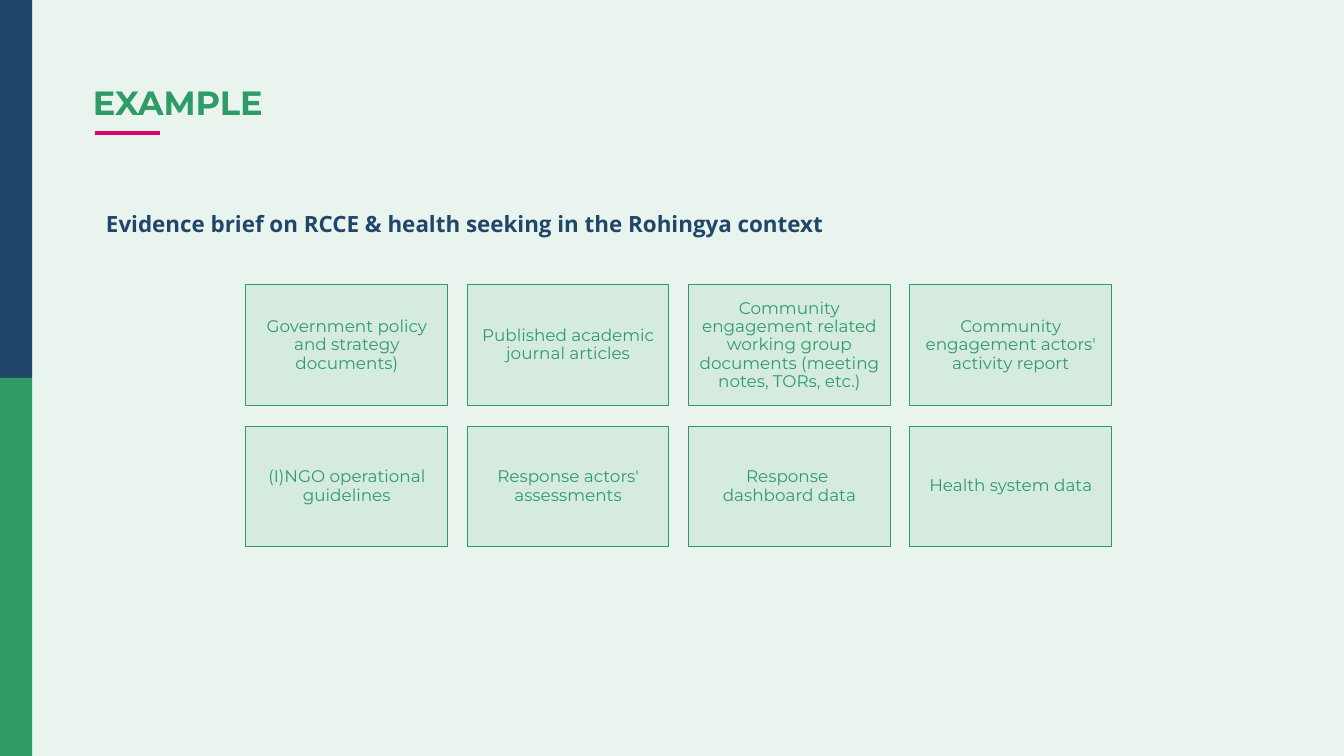
from dataclasses import dataclass

from lxml.etree import SubElement
from pptx import Presentation
from pptx.dml.color import RGBColor as RGB
from pptx.enum.shapes import MSO_CONNECTOR as LINK
from pptx.enum.shapes import MSO_SHAPE as SHAPE
from pptx.enum.text import MSO_ANCHOR as ANCHOR
from pptx.enum.text import PP_ALIGN as ALIGN
from pptx.oxml.ns import qn
from pptx.util import Inches, Pt


@dataclass(frozen=True)
class Theme:
    """Colours, fonts and type sizes of the slide."""

    green: RGB = RGB.from_string("2F9C67")
    navy: RGB = RGB.from_string("204669")
    pink: RGB = RGB.from_string("D90368")
    pale: RGB = RGB.from_string("E9F4EE")
    head: str = "Montserrat"
    body: str = "Open Sans"
    title: Pt = Pt(18)
    lead: Pt = Pt(12)
    card: Pt = Pt(9)


THEME = Theme()
WIDTH = 10
HEIGHT = WIDTH * 9 / 16
SOURCES = [
    [
        "Government policy and strategy documents)",
        "Published academic journal articles",
        "Community engagement related working group documents (meeting notes, TORs, etc.)",
        "Community engagement actors' activity report",
    ],
    [
        "(I)NGO operational guidelines",
        "Response actors' assessments",
        "Response \vdashboard data",
        "Health system data",
    ],
]


def apply(target, values):
    """Set each named attribute on the target."""
    for name, value in values.items():
        setattr(target, name, value)


def write(frame, text, font, color, box, para):
    """Put one styled paragraph in a text frame."""
    apply(frame, {"word_wrap": True, **box})
    line = frame.paragraphs[0]
    line.text = text
    apply(line, para)
    for run in line.runs:
        apply(run.font, font)
        run.font.color.rgb = color


def add_rect(slide, left, top, width, height, color):
    """Add a plain rectangle without outline or shadow."""
    rect = slide.shapes.add_shape(
        SHAPE.RECTANGLE, Inches(left), Inches(top), Inches(width), Inches(height)
    )
    rect.shadow.inherit = False
    rect.fill.solid()
    rect.fill.fore_color.rgb = color
    rect.line.fill.background()
    return rect


def add_rule(slide, left, right, y):
    """Add the short accent line under the title."""
    rule = slide.shapes.add_connector(
        LINK.STRAIGHT, Inches(left), Inches(y), Inches(right), Inches(y)
    )
    rule.line.color.rgb = THEME.pink
    rule.line.width = Pt(2.25)
    SubElement(rule._element.spPr, qn("a:effectLst"))


def add_title(slide, text):
    """Place and style the title."""
    title = slide.shapes.title
    place = {"left": 0.69, "top": 0.59, "width": 8.62, "height": 0.37}
    apply(title, {name: Inches(size) for name, size in place.items()})
    font = {"name": THEME.head, "size": THEME.title, "bold": True}
    box = {"margin_left": 0, "vertical_anchor": ANCHOR.TOP}
    para = {"alignment": ALIGN.LEFT, "line_spacing": 0.9}
    write(title.text_frame, text, font, THEME.green, box, para)


def add_lead(slide, text):
    """Add the heading above the cards."""
    lead = slide.shapes.add_textbox(
        Inches(0.69), Inches(1.5), Inches(8.62), Inches(0.49)
    )
    font = {"name": THEME.body, "size": THEME.lead, "bold": True}
    write(lead.text_frame, text, font, THEME.navy, {}, {"line_spacing": Pt(15.4)})


def add_card(slide, left, top, width, height, text):
    """Add a tinted, outlined box with centred text."""
    card = add_rect(slide, left, top, width, height, THEME.green)
    tint = card._element.spPr.find(qn("a:solidFill"))[0]
    SubElement(tint, qn("a:alpha"), val="10000")
    card.line.color.rgb = THEME.green
    card.line.width = Pt(0.5)
    sides = ("left", "top", "right", "bottom")
    box = {f"margin_{side}": Inches(0.04) for side in sides}
    box["vertical_anchor"] = ANCHOR.MIDDLE
    font = {"name": THEME.head, "size": THEME.card}
    para = {"alignment": ALIGN.CENTER, "line_spacing": 0.9}
    write(card.text_frame, text, font, THEME.green, box, para)


def add_grid(slide, rows):
    """Lay the cards out in rows with equal gaps."""
    left, right, top, width, height, gap = 1.83, 8.27, 2.12, 1.5, 0.9, 0.15
    for row, texts in enumerate(rows):
        step = (right - left - width) / (len(texts) - 1)
        for col, text in enumerate(texts):
            x, y = left + col * step, top + row * (height + gap)
            add_card(slide, x, y, width, height, text)


def main():
    """Build and save the slide."""
    deck = Presentation()
    apply(deck, {"slide_width": Inches(WIDTH), "slide_height": Inches(HEIGHT)})
    slide = deck.slides.add_slide(deck.slide_layouts[5])
    slide.background.fill.solid()
    slide.background.fill.fore_color.rgb = THEME.pale
    half = HEIGHT / 2
    for part, color in enumerate((THEME.navy, THEME.green)):
        add_rect(slide, 0, part * half, 0.24, half, color)
    add_rule(slide, 0.71, 1.19, 0.99)
    add_title(slide, "EXAMPLE")
    add_lead(slide, "Evidence brief on RCCE & health seeking in the Rohingya context")
    add_grid(slide, SOURCES)
    deck.save("out.pptx")


if __name__ == "__main__":
    main()
